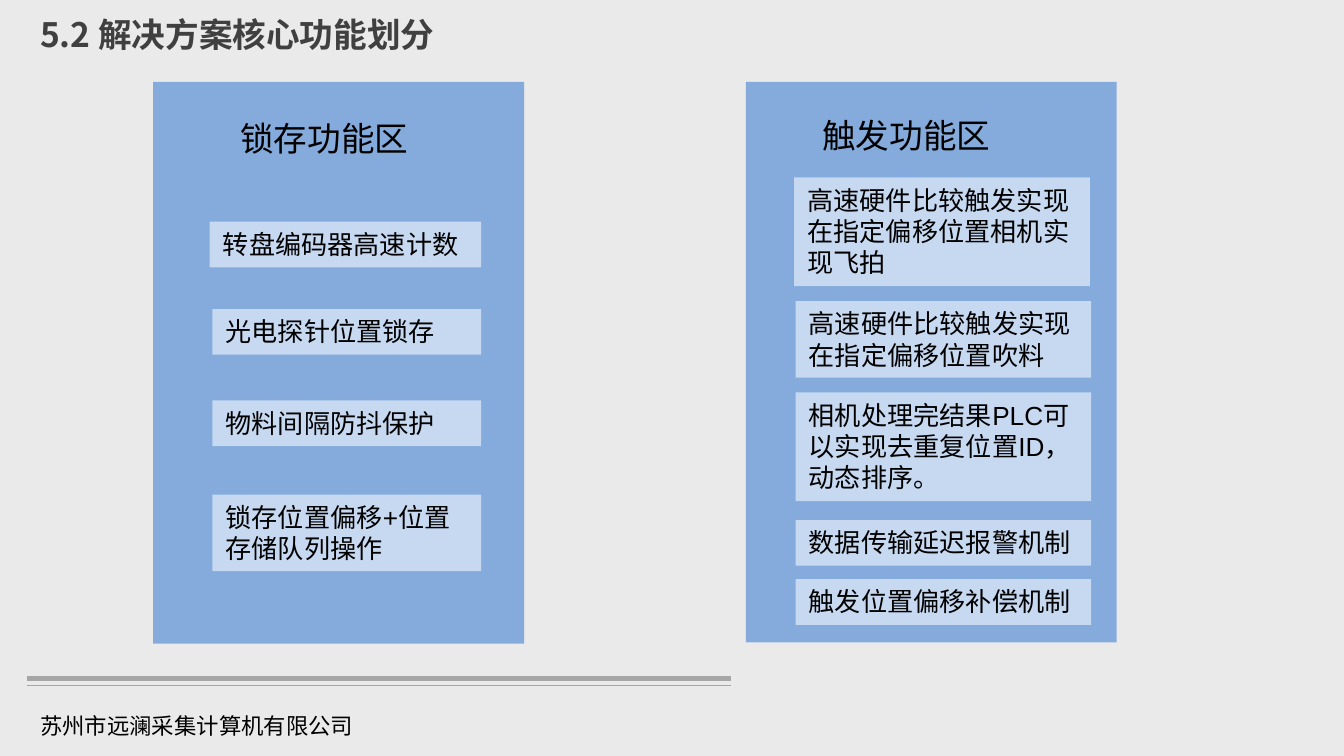
from dataclasses import dataclass

from lxml import etree
from pptx import Presentation
from pptx.dml.color import RGBColor
from pptx.enum.shapes import MSO_CONNECTOR, MSO_SHAPE
from pptx.enum.text import MSO_AUTO_SIZE, PP_ALIGN
from pptx.oxml.ns import qn
from pptx.util import Inches, Pt

STRAIGHT = MSO_CONNECTOR.STRAIGHT
RECTANGLE = MSO_SHAPE.RECTANGLE
GROW = MSO_AUTO_SIZE.SHAPE_TO_FIT_TEXT
LEFT = PP_ALIGN.LEFT

BACKDROP = RGBColor(0xEA, 0xEA, 0xEA)
RULE_GRAY = RGBColor(0xA6, 0xA6, 0xA6)
TITLE_GRAY = RGBColor(0x40, 0x40, 0x40)
ZONE_BLUE = RGBColor(0x55, 0x8E, 0xD5)
FUNCTION_BLUE = RGBColor(0xC6, 0xD9, 0xF1)
BLACK = RGBColor(0, 0, 0)

BODY_FONT = "Arial"
CJK_FONT = "Noto Sans CJK SC"
SLIDE_WIDTH = 10
SLIDE_HEIGHT = SLIDE_WIDTH * 9 / 16
ZONE_OPACITY = 68
LINE_HEIGHTS = {1: 0.34, 2: 0.57, 3: 0.81}


@dataclass(frozen=True)
class Function:
    left: float
    top: float
    width: float
    lines: int
    text: str


@dataclass(frozen=True)
class Zone:
    left: float
    height: float
    heading: str
    heading_left: float
    heading_top: float
    functions: tuple[Function, ...]


ZONES = (
    Zone(1.14, 4.18, "锁存功能区", 1.69, 0.83, (
        Function(1.56, 1.65, 2.02, 1, "转盘编码器高速计数"),
        Function(1.58, 2.3, 2, 1, "光电探针位置锁存"),
        Function(1.58, 2.98, 2, 1, "物料间隔防抖保护"),
        Function(1.58, 3.68, 2, 2, "锁存位置偏移+位置存储队列操作"),
    )),
    Zone(5.55, 4.17, "触发功能区", 6.02, 0.81, (
        Function(5.91, 1.32, 2.2, 3, "高速硬件比较触发实现在指定偏移位置相机实现飞拍"),
        Function(5.92, 2.24, 2.2, 2, "高速硬件比较触发实现在指定偏移位置吹料"),
        Function(5.92, 2.92, 2.2, 3, "相机处理完结果PLC可以实现去重复位置ID，动态排序。"),
        Function(5.92, 3.87, 2.2, 1, "数据传输延迟报警机制"),
        Function(5.92, 4.31, 2.2, 1, "触发位置偏移补偿机制"),
    )),
)


def add_text(slide, text: str, left: float, top: float, width: float, height: float,
             size: float, font: str = BODY_FONT, color: RGBColor = BLACK):
    box = slide.shapes.add_textbox(Inches(left), Inches(top), Inches(width), Inches(height))
    frame = box.text_frame
    frame.word_wrap = True
    frame.auto_size = GROW
    paragraph = frame.paragraphs[0]
    paragraph.text = text
    paragraph.alignment = LEFT
    paragraph.font.name = font
    paragraph.font.size = Pt(size)
    paragraph.font.color.rgb = color
    return box


def add_rule(slide, top: float, weight: float) -> None:
    rule = slide.shapes.add_connector(
        STRAIGHT, Inches(0.2), Inches(top), Inches(5.44), Inches(top))
    rule.line.color.rgb = RULE_GRAY
    rule.line.width = Pt(weight)
    etree.SubElement(rule._element.spPr, qn("a:effectLst"))


def add_zone(slide, zone: Zone) -> None:
    panel = slide.shapes.add_shape(
        RECTANGLE, Inches(zone.left), Inches(0.61), Inches(2.76), Inches(zone.height))
    panel.shadow.inherit = False
    panel.fill.solid()
    panel.fill.fore_color.rgb = ZONE_BLUE
    panel.line.fill.background()
    tint = panel._element.spPr.find(qn("a:solidFill")).find(qn("a:srgbClr"))
    etree.SubElement(tint, qn("a:alpha"), val=str(ZONE_OPACITY * 1000))

    add_text(slide, zone.heading, zone.heading_left, zone.heading_top, 1.81, 0.4, 18)
    for function in zone.functions:
        card = add_text(slide, function.text, function.left, function.top,
                        function.width, LINE_HEIGHTS[function.lines], 14)
        card.fill.solid()
        card.fill.fore_color.rgb = FUNCTION_BLUE


def main() -> None:
    presentation = Presentation()
    presentation.slide_width = Inches(SLIDE_WIDTH)
    presentation.slide_height = Inches(SLIDE_HEIGHT)
    slide = presentation.slides.add_slide(presentation.slide_layouts[6])
    slide.background.fill.solid()
    slide.background.fill.fore_color.rgb = BACKDROP

    add_rule(slide, 5.05, 2.75)
    add_rule(slide, 5.1, 0.75)
    company = add_text(slide, "苏州市远澜采集计算机有限公司", 0.2, 5.17, 5.22, 0.34, 12,
                       CJK_FONT)
    company.text_frame.paragraphs[0].line_spacing = Pt(20.3)

    title = add_text(slide, "5.2 解决方案核心功能划分", 0.2, 0.01, 5, 0.42, 18,
                     CJK_FONT, TITLE_GRAY)
    title_line = title.text_frame.paragraphs[0]
    title_line.font.bold = True
    title_line.line_spacing = Pt(24.8)

    for zone in ZONES:
        add_zone(slide, zone)

    presentation.save("out.pptx")


if __name__ == "__main__":
    main()
